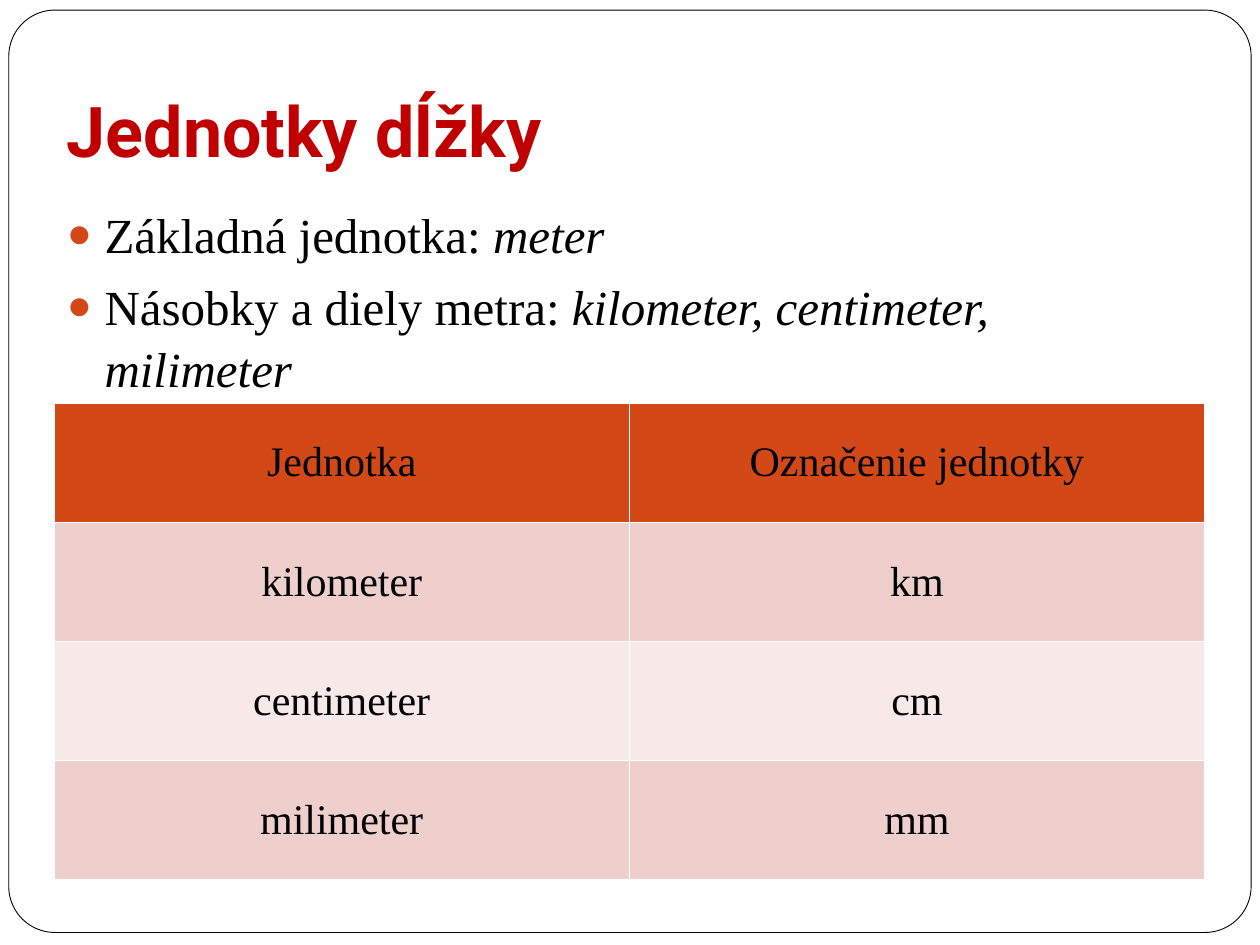
from dataclasses import dataclass

from lxml.etree import SubElement
from pptx import Presentation
from pptx.dml.color import RGBColor
from pptx.enum.shapes import MSO_SHAPE
from pptx.enum.text import MSO_ANCHOR, MSO_AUTO_SIZE, PP_ALIGN
from pptx.oxml import parse_xml
from pptx.oxml.ns import nsdecls, qn
from pptx.util import Inches, Pt


@dataclass(frozen=True)
class Theme:
    title_font: str = "Roboto"
    text_font: str = "Times New Roman"
    title_size: int = 40
    body_size: int = 28
    cell_size: int = 24
    title: str = "C00000"
    text: str = "000000"
    accent: str = "D34817"
    paper: str = "FFFFFF"
    bands: tuple = ("EFCFCC", "F7E9E8")


THEME = Theme()
SLIDE_WIDTH, SLIDE_HEIGHT = Inches(10), Inches(7.5)

FRAME_AREA = (0.7, 1.07, 98.6, 97.6)
TITLE_AREA = (4.3, 2.8, 85, 16.67)
BODY_AREA = (4.3, 20.67, 90, 64.4)
TABLE_AREA = (4.3, 42.67, 91.3, 50.4)

TITLE = "Jednotky dĺžky"
FACTS = [
    ("Základná jednotka: ", "meter"),
    ("Násobky a diely metra: ", "kilometer, centimeter, milimeter"),
]
UNITS = [
    ("Jednotka", "Označenie jednotky"),
    ("kilometer", "km"),
    ("centimeter", "cm"),
    ("milimeter", "mm"),
]


def from_percent(area):
    sides = (SLIDE_WIDTH, SLIDE_HEIGHT) * 2
    return [round(side * share / 100) for side, share in zip(sides, area)]


def place(placeholder, area):
    placeholder.left, placeholder.top, placeholder.width, placeholder.height = from_percent(area)
    placeholder.text_frame.auto_size = MSO_AUTO_SIZE.NONE
    placeholder.text_frame.word_wrap = True


def style(run, font, size, color, bold=False, italic=False):
    run.font.name = font
    run.font.size = Pt(size)
    run.font.color.rgb = RGBColor.from_string(color)
    run.font.bold = bold
    run.font.italic = italic


def add_frame(slide):
    frame = slide.shapes.add_shape(MSO_SHAPE.ROUNDED_RECTANGLE, *from_percent(FRAME_AREA))
    frame.adjustments[0] = 0.05
    frame.shadow.inherit = False
    frame.fill.solid()
    frame.fill.fore_color.rgb = RGBColor.from_string(THEME.paper)
    frame.line.color.rgb = RGBColor.from_string(THEME.text)
    frame.line.width = Pt(0.5)
    slide.shapes.title._element.addprevious(frame._element)


def fill_title(title):
    place(title, TITLE_AREA)
    heading = title.text_frame
    heading.text = TITLE
    heading.vertical_anchor = MSO_ANCHOR.BOTTOM
    heading.margin_bottom = Inches(0.1)
    heading.paragraphs[0].alignment = PP_ALIGN.LEFT
    style(heading.paragraphs[0].runs[0], THEME.title_font, THEME.title_size, THEME.title, bold=True)


def set_bullet(paragraph):
    properties = paragraph._p.get_or_add_pPr()
    properties.set("marL", str(Inches(0.3)))
    properties.set("indent", str(-Inches(0.3)))
    bullet_color = SubElement(properties, qn("a:buClr"))
    SubElement(bullet_color, qn("a:srgbClr"), val=THEME.accent)
    SubElement(properties, qn("a:buSzPct"), val="85000")
    SubElement(properties, qn("a:buFont"), typeface=THEME.text_font)
    SubElement(properties, qn("a:buChar"), char="●")


def fill_facts(body):
    place(body, BODY_AREA)
    facts = body.text_frame
    for index, (label, units) in enumerate(FACTS):
        fact = facts.add_paragraph() if index else facts.paragraphs[0]
        fact.space_before = Pt(5.8)
        fact.line_spacing = 1.05
        set_bullet(fact)
        for words, italic in ((label, False), (units, True)):
            run = fact.add_run()
            run.text = words
            style(run, THEME.text_font, THEME.body_size, THEME.text, italic=italic)


def set_borders(cell):
    properties = cell._tc.get_or_add_tcPr()
    for position, side in enumerate(("lnL", "lnR", "lnT", "lnB")):
        border = parse_xml(
            f'<a:{side} {nsdecls("a")} w="{Pt(1)}"><a:solidFill>'
            f'<a:srgbClr val="{THEME.paper}"/></a:solidFill></a:{side}>'
        )
        properties.insert(position, border)


def fill_cell(cell, words, color):
    cell.text = words
    cell.vertical_anchor = MSO_ANCHOR.MIDDLE
    cell.fill.solid()
    cell.fill.fore_color.rgb = RGBColor.from_string(color)
    set_borders(cell)
    paragraph = cell.text_frame.paragraphs[0]
    paragraph.alignment = PP_ALIGN.CENTER
    style(paragraph.runs[0], THEME.text_font, THEME.cell_size, THEME.text)


def add_units(slide):
    units = slide.shapes.add_table(len(UNITS), len(UNITS[0]), *from_percent(TABLE_AREA)).table
    for row, entries in enumerate(UNITS):
        color = THEME.bands[(row - 1) % 2] if row else THEME.accent
        for column, words in enumerate(entries):
            fill_cell(units.cell(row, column), words, color)


def main():
    deck = Presentation()
    deck.slide_width, deck.slide_height = SLIDE_WIDTH, SLIDE_HEIGHT
    slide = deck.slides.add_slide(deck.slide_layouts[1])
    add_frame(slide)
    fill_title(slide.shapes.title)
    fill_facts(slide.placeholders[1])
    add_units(slide)
    deck.save("out.pptx")


if __name__ == "__main__":
    main()
